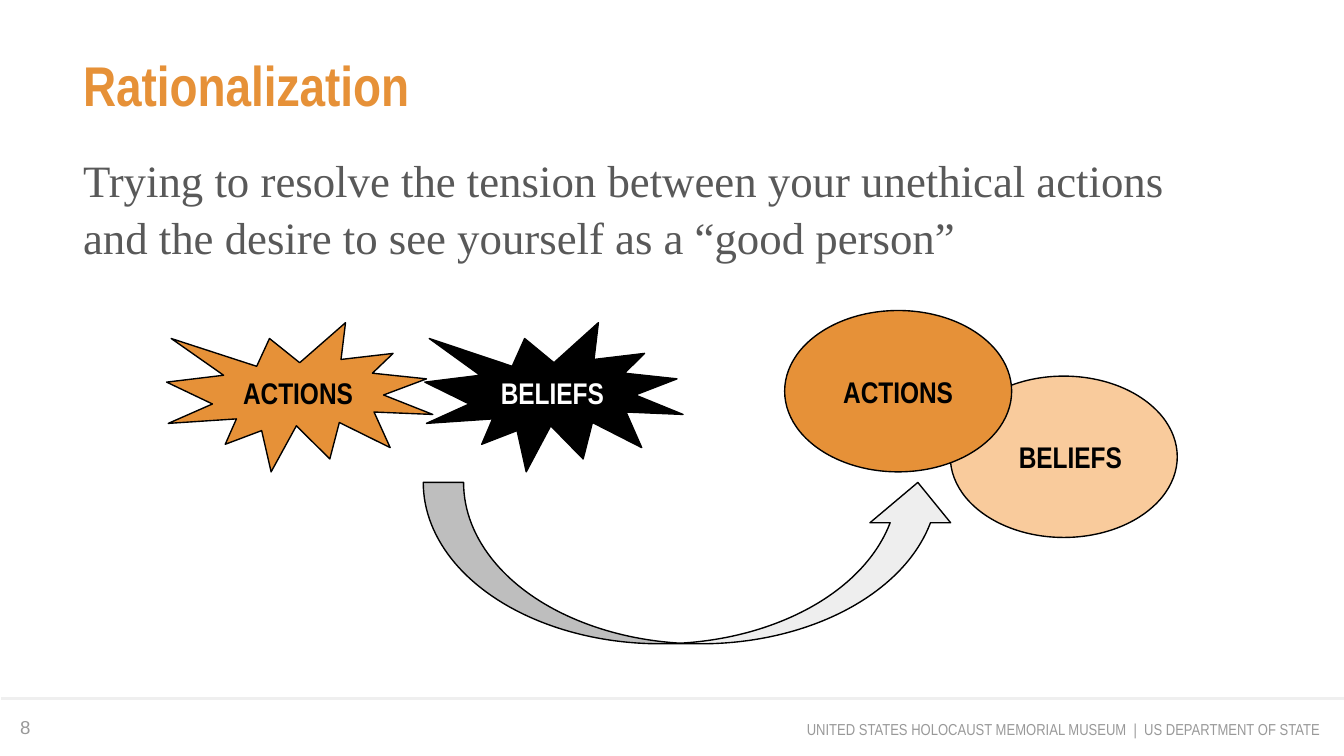
from pptx import Presentation
from pptx.dml.color import RGBColor
from pptx.enum.shapes import MSO_CONNECTOR, MSO_SHAPE as SHAPE
from pptx.enum.text import MSO_ANCHOR as ANCHOR, MSO_AUTO_SIZE, PP_ALIGN as ALIGN
from pptx.oxml.ns import qn
from pptx.util import Cm, Pt
from lxml.etree import SubElement

COLORS = {
    "orange": "E69138",
    "peach": "F9CB9C",
    "black": "000000",
    "white": "FFFFFF",
    "body": "595959",
    "footer": "999999",
    "pale": "EFEFEF",
    "arrow": "EEEEEE",
}
NARROW = "Arial Narrow"


def rgb(name):
    return RGBColor.from_string(COLORS[name])


def write(shape, lines, font, size, color, bold=False, align=ALIGN.LEFT,
          anchor=ANCHOR.MIDDLE, inset=0.25, spacing=1.0):
    frame = shape.text_frame
    frame.word_wrap = True
    frame.auto_size = MSO_AUTO_SIZE.NONE
    frame.vertical_anchor = anchor
    frame.margin_left = frame.margin_right = Cm(inset)
    frame.margin_top = frame.margin_bottom = Cm(inset)
    paragraph = frame.paragraphs[0]
    paragraph.alignment = align
    paragraph.line_spacing = spacing
    for number, line in enumerate(lines):
        if number:
            paragraph.add_line_break()
        run = paragraph.add_run()
        run.text = line
        run.font.name = font
        run.font.size = Pt(size)
        run.font.bold = bold
        run.font.color.rgb = rgb(color)


prs = Presentation()
prs.slide_width, prs.slide_height = Cm(25.4), Cm(14.29)
slide = prs.slides.add_slide(prs.slide_layouts[5])
shapes = slide.shapes

title = shapes.title
title.left, title.top, title.width, title.height = Cm(1.57), Cm(0.9), Cm(22.23), Cm(1.4)
write(title, ["Rationalization"], NARROW, 30, "orange", bold=True,
      anchor=ANCHOR.TOP, inset=0, spacing=1.05)

definition = shapes.add_textbox(Cm(1.57), Cm(2.84), Cm(22.23), Cm(2.3))
write(definition, ["Trying to resolve the tension between your unethical actions",
                   "and the desire to see yourself as a “good person”"],
      "Times New Roman", 24, "body", anchor=ANCHOR.TOP, inset=0, spacing=1.05)

footer_rule = shapes.add_connector(MSO_CONNECTOR.STRAIGHT, Cm(0.02), Cm(13.21), Cm(25.4), Cm(13.21))
footer_rule.line.color.rgb = rgb("pale")
footer_rule.line.width = Pt(1.5)
SubElement(footer_rule._element.spPr, qn("a:effectLst"))

footer = shapes.add_textbox(Cm(13.16), Cm(13.23), Cm(12.04), Cm(1.09))
write(footer, ["UNITED STATES HOLOCAUST MEMORIAL MUSEUM  |  US DEPARTMENT OF STATE"],
      NARROW, 8.5, "footer", align=ALIGN.RIGHT)

page_number = shapes.add_textbox(Cm(0.13), Cm(13.11), Cm(1.98), Cm(1.09))
write(page_number, ["8"], "Arial", 10, "footer", anchor=ANCHOR.BOTTOM)

BURST, OVAL = SHAPE.EXPLOSION1, SHAPE.OVAL
figures = [
    (BURST, 3.15, 6.1, 5.03, 2.82, "orange", "ACTIONS", "black"),
    (BURST, 8.03, 6.1, 4.88, 2.82, "black", "BELIEFS", "white"),
    (SHAPE.CURVED_UP_ARROW, 8, 9.12, 10.11, 3.05, "arrow", None, None),
    (OVAL, 17.96, 7.11, 4.29, 3.05, "peach", "BELIEFS", "black"),
    (OVAL, 14.83, 5.87, 4.29, 3.05, "orange", "ACTIONS", "black"),
]
for kind, left, top, width, height, fill, label, label_color in figures:
    figure = shapes.add_shape(kind, Cm(left), Cm(top), Cm(width), Cm(height))
    figure.shadow.inherit = False
    figure.fill.solid()
    figure.fill.fore_color.rgb = rgb(fill)
    figure.line.color.rgb = rgb("black")
    figure.line.width = Pt(0.75)
    if label:
        write(figure, [label], NARROW, 16, label_color, bold=True, align=ALIGN.CENTER)
    if fill == "peach":
        figure.text_frame.margin_left = Cm(0.5)

prs.save("out.pptx")
